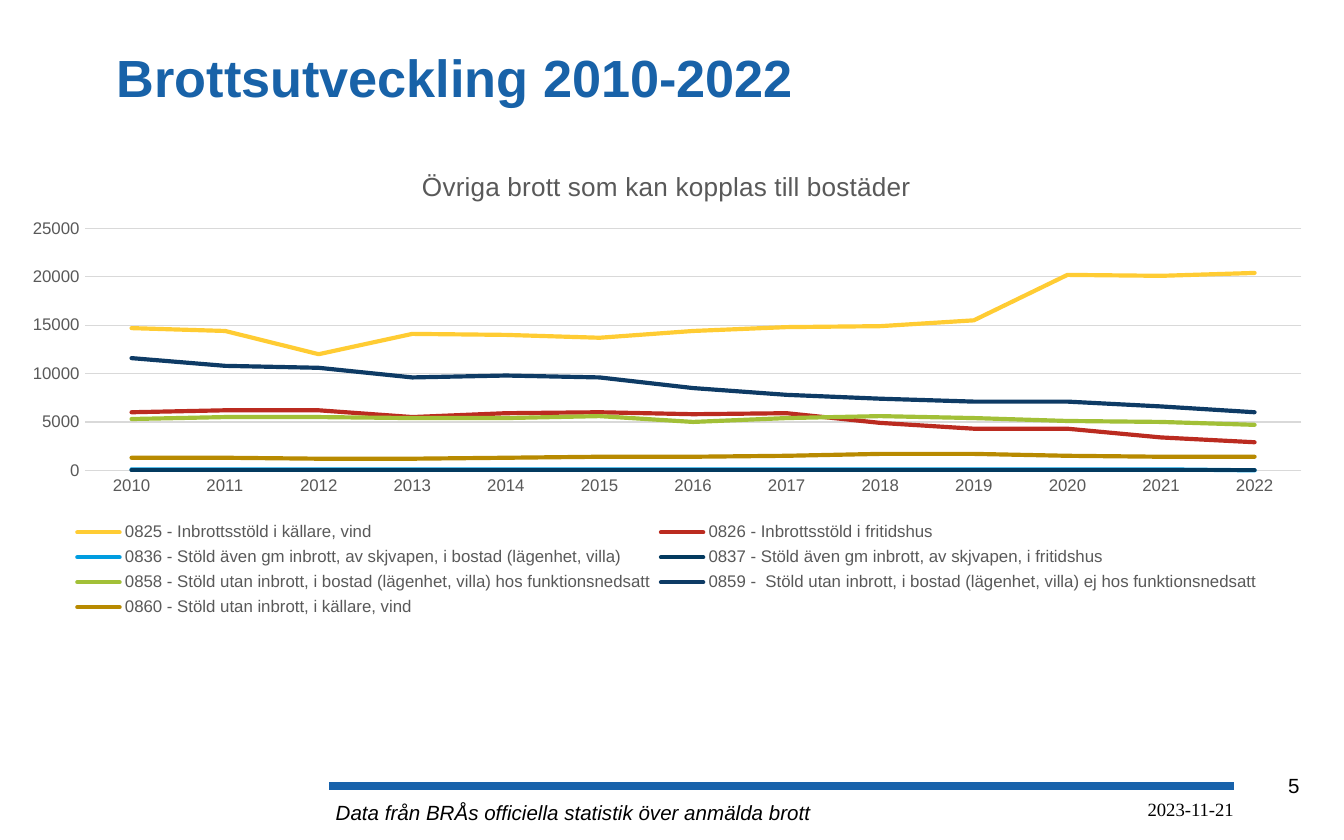
import dataclasses

import pptx
import pptx.chart.data
import pptx.dml.color
import pptx.enum.chart
import pptx.enum.shapes
import pptx.enum.text
import pptx.oxml
import pptx.oxml.ns
import pptx.util

Pt = pptx.util.Pt
RGB = pptx.dml.color.RGBColor.from_string
Align = pptx.enum.text.PP_ALIGN
Anchor = pptx.enum.text.MSO_ANCHOR


@dataclasses.dataclass(frozen=True)
class Theme:
    font: str = "Arial"
    date_font: str = "Times New Roman"
    title: str = "1862A8"
    rule: str = "1862AB"
    ink: str = "000000"
    label: str = "595959"
    grid: str = "D9D9D9"
    title_size: float = 28
    chart_title_size: float = 14
    footer_size: float = 11
    date_size: float = 10
    label_size: float = 9
    rule_width: float = 4.5
    series_width: float = 2.25
    grid_width: float = 0.75


THEME = Theme()
YEARS = [str(year) for year in range(2010, 2023)]
CRIMES = [
    ("0825 - Inbrottsstöld i källare, vind", "FFCC33",
     [14700, 14400, 12000, 14100, 14000, 13700, 14400, 14800, 14900, 15500, 20200, 20100, 20400]),
    ("0826 - Inbrottsstöld i fritidshus", "BB2B20",
     [6000, 6200, 6200, 5500, 5900, 6000, 5800, 5900, 4900, 4300, 4300, 3400, 2900]),
    ("0836 - Stöld även gm inbrott, av skjvapen, i bostad (lägenhet, villa)", "009DE0",
     [100] * 12 + [0]),
    ("0837 - Stöld även gm inbrott, av skjvapen, i fritidshus", "033A5F", [0] * 13),
    ("0858 - Stöld utan inbrott, i bostad (lägenhet, villa) hos funktionsnedsatt", "A2C037",
     [5300, 5500, 5500, 5400, 5400, 5600, 5000, 5400, 5600, 5400, 5100, 5000, 4700]),
    ("0859 -  Stöld utan inbrott, i bostad (lägenhet, villa) ej hos funktionsnedsatt", "0E3B65",
     [11600, 10800, 10600, 9600, 9800, 9600, 8500, 7800, 7400, 7100, 7100, 6600, 6000]),
    ("0860 - Stöld utan inbrott, i källare, vind", "B88A00",
     [1300, 1300, 1200, 1200, 1300, 1400, 1400, 1500, 1700, 1700, 1500, 1400, 1400]),
]


def style_font(font, size, color, name=THEME.font, bold=False, italic=False):
    font.name = name
    font.size = Pt(size)
    font.bold = bold
    font.italic = italic
    font.color.rgb = RGB(color)


def style_line(line, color, width):
    line.color.rgb = RGB(color)
    line.width = Pt(width)


def write_text(frame, text, *, align=Align.LEFT, anchor=Anchor.TOP, wrap=True,
               insets=(7.2, 3.6), **font_format):
    frame.word_wrap = wrap
    frame.auto_size = pptx.enum.text.MSO_AUTO_SIZE.NONE
    frame.vertical_anchor = anchor
    frame.margin_left = frame.margin_right = Pt(insets[0])
    frame.margin_top = frame.margin_bottom = Pt(insets[1])
    paragraph = frame.paragraphs[0]
    paragraph.alignment = align
    run = paragraph.add_run()
    run.text = text
    style_font(run.font, **font_format)


def add_label(slide, text, left, top, width, height, **text_format):
    label = slide.shapes.add_textbox(Pt(left), Pt(top), Pt(width), Pt(height))
    write_text(label.text_frame, text, **text_format)


def add_heading(slide, text):
    heading = slide.shapes.title
    heading.left, heading.top = Pt(57.6), Pt(3.6)
    heading.width, heading.height = Pt(605.5), Pt(75)
    write_text(heading.text_frame, text, anchor=Anchor.MIDDLE, insets=(5, 2.9),
               size=THEME.title_size, color=THEME.title, bold=True)


def add_rule(slide, left, right, y):
    rule = slide.shapes.add_connector(
        pptx.enum.shapes.MSO_CONNECTOR.STRAIGHT, Pt(left), Pt(y), Pt(right), Pt(y))
    style_line(rule.line, THEME.rule, THEME.rule_width)
    rule.element.spPr.append(pptx.oxml.parse_xml(
        f"<a:effectLst {pptx.oxml.ns.nsdecls('a')}/>"))


def place_plot(chart, **fractions):
    plot_area = chart.element.xpath("c:chart/c:plotArea")[0]
    for layout in plot_area.xpath("c:layout"):
        plot_area.remove(layout)
    sizes = "".join(f'<c:{key} val="{value}"/>' for key, value in fractions.items())
    plot_area.insert(0, pptx.oxml.parse_xml(
        f"<c:layout {pptx.oxml.ns.nsdecls('c')}><c:manualLayout>"
        '<c:layoutTarget val="inner"/><c:xMode val="edge"/><c:yMode val="edge"/>'
        f"{sizes}</c:manualLayout></c:layout>"))


def style_axes(chart):
    for axis in (chart.category_axis, chart.value_axis):
        axis.major_tick_mark = pptx.enum.chart.XL_TICK_MARK.NONE
        axis.minor_tick_mark = pptx.enum.chart.XL_TICK_MARK.NONE
        style_font(axis.tick_labels.font, THEME.label_size, THEME.label)
    style_line(chart.category_axis.format.line, THEME.grid, THEME.grid_width)
    values = chart.value_axis
    values.minimum_scale, values.maximum_scale, values.major_unit = 0, 25000, 5000
    values.format.line.fill.background()
    values.has_major_gridlines = True
    style_line(values.major_gridlines.format.line, THEME.grid, THEME.grid_width)


def add_crime_chart(slide, title):
    crime_data = pptx.chart.data.CategoryChartData()
    crime_data.categories = YEARS
    for name, _, counts in CRIMES:
        crime_data.add_series(name, counts)
    chart = slide.shapes.add_chart(
        pptx.enum.chart.XL_CHART_TYPE.LINE,
        Pt(2.9), Pt(79.2), Pt(708.5), Pt(254.2), crime_data).chart
    style_font(chart.font, THEME.label_size, THEME.label)
    chart.has_title = True
    write_text(chart.chart_title.text_frame, title, align=Align.CENTER,
               size=THEME.chart_title_size, color=THEME.label)
    chart.chart_title.include_in_layout = False
    chart.has_legend = True
    chart.legend.position = pptx.enum.chart.XL_LEGEND_POSITION.BOTTOM
    chart.legend.include_in_layout = False
    style_font(chart.legend.font, THEME.label_size, THEME.label)
    style_axes(chart)
    for series, (_, color, _) in zip(chart.plots[0].series, CRIMES):
        series.smooth = False
        series.marker.style = pptx.enum.chart.XL_MARKER_STYLE.NONE
        style_line(series.format.line, color, THEME.series_width)
    for outline in chart.element.xpath(".//c:ser/c:spPr/a:ln"):
        outline.set("cap", "rnd")
    place_plot(chart, x=0.06, y=0.17, w=0.92, h=0.51)


def main():
    deck = pptx.Presentation()
    deck.slide_width, deck.slide_height = Pt(720), Pt(450)
    slide = deck.slides.add_slide(deck.slide_layouts.get_by_name("Title Only"))
    add_label(slide, "5", 667.4, 411.1, 35.3, 19.4, align=Align.RIGHT, insets=(6.5, 2.9),
              size=THEME.footer_size, color=THEME.ink)
    add_rule(slide, 176.4, 661, 421.2)
    add_label(slide, "2023-11-21", 224.6, 424.1, 442.8, 18.7, align=Align.RIGHT,
              size=THEME.date_size, color=THEME.ink, name=THEME.date_font, insets=(6.5, 3.6))
    add_heading(slide, "Brottsutveckling 2010-2022")
    add_label(slide, "Data från BRÅs officiella statistik över anmälda brott",
              172.8, 424.8, 270.7, 20.9, wrap=False,
              size=THEME.footer_size, color=THEME.ink, italic=True)
    add_crime_chart(slide, "Övriga brott som kan kopplas till bostäder")
    deck.save("out.pptx")


if __name__ == "__main__":
    main()
